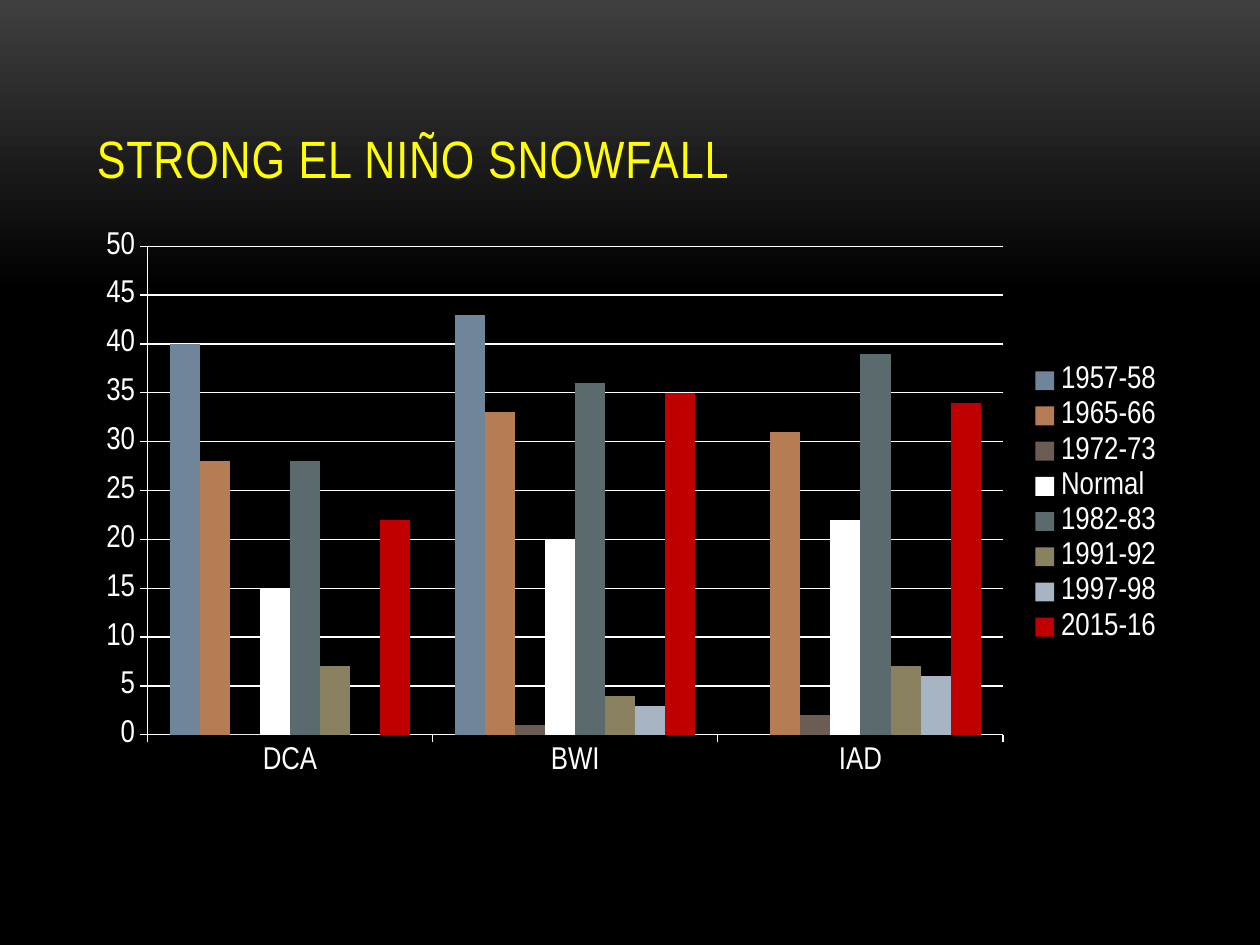
from pptx import Presentation
from pptx.chart.data import CategoryChartData
from pptx.dml.color import RGBColor
from pptx.enum.chart import XL_CHART_TYPE, XL_LEGEND_POSITION, XL_TICK_MARK
from pptx.enum.text import MSO_ANCHOR
from pptx.util import Inches, Pt

FONT = "Arial Narrow"
BLACK = RGBColor(0x00, 0x00, 0x00)
CHARCOAL = RGBColor(0x3F, 0x3F, 0x3F)
WHITE = RGBColor(0xFF, 0xFF, 0xFF)
YELLOW = RGBColor(0xFF, 0xFF, 0x00)
BLUE = RGBColor(0x6F, 0x85, 0x99)
COPPER = RGBColor(0xB4, 0x7D, 0x54)
BROWN = RGBColor(0x6B, 0x5D, 0x54)
SLATE = RGBColor(0x5B, 0x6A, 0x6C)
OLIVE = RGBColor(0x8A, 0x81, 0x61)
PALE_BLUE = RGBColor(0xA7, 0xB4, 0xC3)
RED = RGBColor(0xC0, 0x00, 0x00)

AIRPORTS = ["DCA", "BWI", "IAD"]
SNOWFALL = [
    ("1957-58", (40, 43, None), BLUE),
    ("1965-66", (28, 33, 31), COPPER),
    ("1972-73", (0, 1, 2), BROWN),
    ("Normal", (15, 20, 22), WHITE),
    ("1982-83", (28, 36, 39), SLATE),
    ("1991-92", (7, 4, 7), OLIVE),
    ("1997-98", (0, 3, 6), PALE_BLUE),
    ("2015-16", (22, 35, 34), RED),
]


def paint_background(slide):
    fill = slide.background.fill
    fill.gradient()
    fill.gradient_angle = 270
    for stop, position, color in zip(fill.gradient_stops, (0, 0.31), (CHARCOAL, BLACK)):
        stop.position = position
        stop.color.rgb = color


def style_font(font, size, color):
    font.name = FONT
    font.size = Pt(size)
    font.bold = False
    font.color.rgb = color


def add_title(slide, text):
    title = slide.shapes.add_textbox(Inches(0.67), Inches(0.3), Inches(8.67), Inches(1.25))
    frame = title.text_frame
    frame.word_wrap = True
    frame.vertical_anchor = MSO_ANCHOR.BOTTOM
    frame.text = text
    run = frame.paragraphs[0].runs[0]
    style_font(run.font, 30, YELLOW)
    run.font._element.set("spc", "50")


def style_line(line):
    line.color.rgb = WHITE
    line.width = Pt(0.75)


def style_axis(axis):
    axis.major_tick_mark = XL_TICK_MARK.OUTSIDE
    axis.minor_tick_mark = XL_TICK_MARK.NONE
    style_line(axis.format.line)


def add_snowfall_chart(slide):
    data = CategoryChartData()
    data.categories = AIRPORTS
    for season, inches, _ in SNOWFALL:
        data.add_series(season, inches)
    chart = slide.shapes.add_chart(
        XL_CHART_TYPE.COLUMN_CLUSTERED,
        Inches(0.67), Inches(1.75), Inches(8.67), Inches(4.5), data,
    ).chart
    chart.has_title = False
    style_font(chart.font, 18, WHITE)

    chart.has_legend = True
    chart.legend.position = XL_LEGEND_POSITION.RIGHT
    chart.legend.include_in_layout = False

    style_axis(chart.category_axis)
    style_axis(chart.value_axis)
    chart.value_axis.minimum_scale = 0
    chart.value_axis.maximum_scale = 50
    chart.value_axis.major_unit = 5
    chart.value_axis.has_major_gridlines = True
    style_line(chart.value_axis.major_gridlines.format.line)

    plot = chart.plots[0]
    plot.gap_width = 150
    plot.overlap = 0
    plot.vary_by_categories = False
    for series, (_, _, color) in zip(plot.series, SNOWFALL):
        series.format.fill.solid()
        series.format.fill.fore_color.rgb = color
        series.invert_if_negative = False


def main():
    deck = Presentation()
    deck.slide_width = Inches(10)
    deck.slide_height = Inches(7.5)
    slide = deck.slides.add_slide(deck.slide_layouts[6])
    paint_background(slide)
    add_title(slide, "STRONG EL NIÑO SNOWFALL")
    add_snowfall_chart(slide)
    deck.save("out.pptx")


if __name__ == "__main__":
    main()
